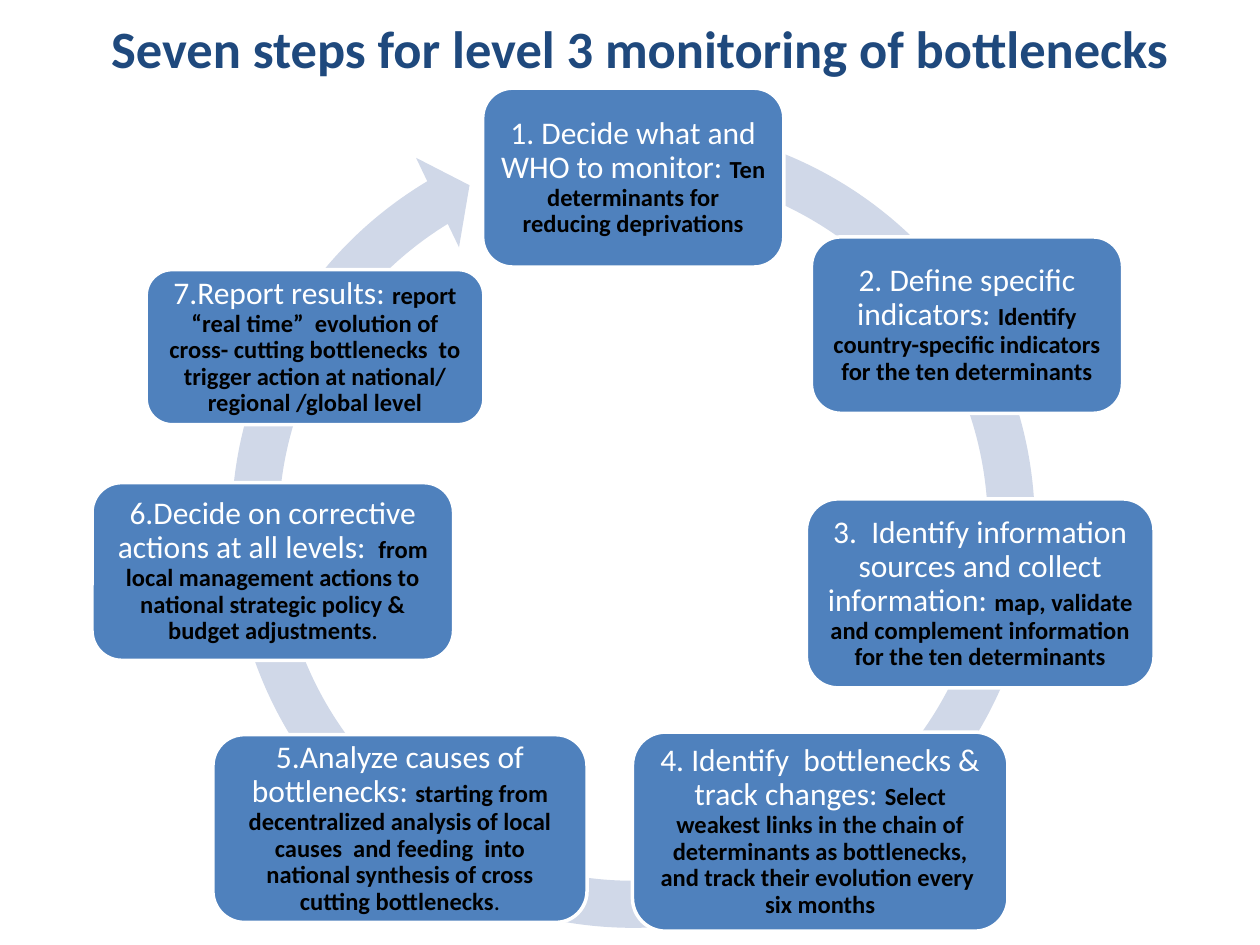
from pptx import Presentation
from pptx.dml.color import RGBColor
from pptx.enum.shapes import MSO_SHAPE
from pptx.enum.text import MSO_ANCHOR, PP_ALIGN
from pptx.util import Pt

ROUNDED = MSO_SHAPE.ROUNDED_RECTANGLE
CIRCULAR_ARROW = MSO_SHAPE.CIRCULAR_ARROW
CENTER = PP_ALIGN.CENTER
MIDDLE = MSO_ANCHOR.MIDDLE

FONT = "Calibri"
COLORS = {
    "title": "1F497D",
    "step": "4F81BD",
    "arrow": "D0D8E8",
    "white": "FFFFFF",
    "black": "000000",
}

# Box (left, top, width, height), then runs of (text, size, color, bold)
STEPS = [
    ((275.8, 50.4, 172.1, 102.2), [
        ("1. Decide what and WHO to monitor: ", 18, "white", False),
        ("Ten determinants for reducing deprivations", 14, "black", True)]),
    ((463.7, 135.4, 177.8, 100.8), [
        ("2. Define specific indicators: ", 18, "white", False),
        ("Identify country-specific indicators for the ten determinants",
         14, "black", True)]),
    ((460.8, 285.1, 198.7, 108), [
        ("3.  Identify information sources and collect information: ",
         18, "white", False),
        ("map, validate and complement information for the ten determinants",
         14, "black", True)]),
    ((361.4, 418.3, 214.6, 113.8), [
        ("4. Identify  bottlenecks & track changes: ", 18, "white", False),
        ("Select weakest links in the chain of determinants as bottlenecks, "
         "and track their evolution every  six months", 14, "black", True)]),
    ((121.7, 419.8, 213.8, 107.3), [
        ("5.Analyze causes of bottlenecks: ", 18, "white", False),
        ("starting from decentralized analysis of local causes  and feeding  "
         "into national synthesis of cross cutting bottlenecks",
         14, "black", True),
        (".", 14, "black", False)]),
    ((52.6, 275.8, 206.6, 101.5), [
        ("6.Decide on corrective actions at all levels: ", 18, "white", False),
        (" ", 14, "black", False),
        ("from local management actions to national strategic policy & "
         "budget adjustments", 14, "black", True),
        (".", 12, "black", True)]),
    ((83.5, 154.1, 193, 88.6), [
        ("7.Report results: ", 18, "white", False),
        ("report “real time”  evolution of cross- cutting bottlenecks  to "
         "trigger action at national/ regional /global level",
         14, "black", True)]),
]


def rgb(name):
    return RGBColor.from_string(COLORS[name])


def format_run(run, size, color, bold):
    run.font.name = FONT
    run.font.size = Pt(size)
    run.font.bold = bold
    run.font.color.rgb = rgb(color)


presentation = Presentation()
presentation.slide_width = Pt(720)
presentation.slide_height = Pt(540)
slide = presentation.slides.add_slide(presentation.slide_layouts[5])

# Title
title = slide.shapes.title
title.left, title.top, title.width, title.height = (
    Pt(value) for value in (5.8, -5.8, 720, 66.2))
title.text_frame.text = "Seven steps for level 3 monitoring of bottlenecks"
title.text_frame.vertical_anchor = MIDDLE
title_paragraph = title.text_frame.paragraphs[0]
title_paragraph.alignment = CENTER
format_run(title_paragraph.runs[0], 30, "title", True)

# Cycle arrow behind the steps
arrow = slide.shapes.add_shape(
    CIRCULAR_ARROW, Pt(117.4), Pt(56.2), Pt(488.9), Pt(488.9))
for index, value in enumerate((0.055, 3.307, 143.3, 170.572, 0.058)):
    arrow.adjustments[index] = value
arrow.shadow.inherit = False
arrow.fill.solid()
arrow.fill.fore_color.rgb = rgb("arrow")
arrow.line.fill.background()

# Steps
for box, runs in STEPS:
    shape = slide.shapes.add_shape(ROUNDED, *(Pt(value) for value in box))
    shape.shadow.inherit = False
    shape.fill.solid()
    shape.fill.fore_color.rgb = rgb("step")
    shape.line.color.rgb = rgb("white")
    shape.line.width = Pt(2)

    frame = shape.text_frame
    frame.word_wrap = True
    frame.vertical_anchor = MIDDLE
    frame.margin_left = frame.margin_right = Pt(5.4)
    frame.margin_top = frame.margin_bottom = Pt(5.4)
    paragraph = frame.paragraphs[0]
    paragraph.alignment = CENTER
    paragraph.line_spacing = 0.9
    for text, size, color, bold in runs:
        run = paragraph.add_run()
        run.text = text
        format_run(run, size, color, bold)

presentation.save("out.pptx")
